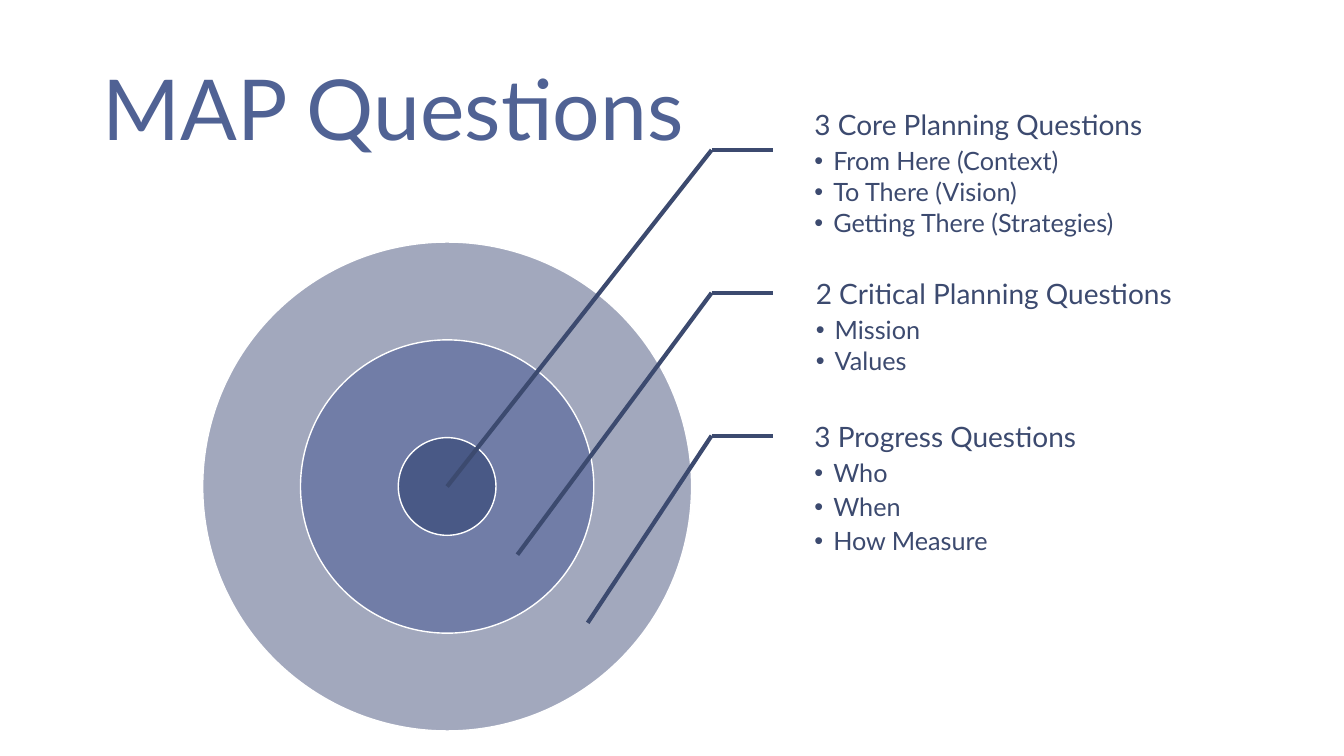
"""Build the MAP Questions slide: concentric rings with three labelled callouts."""
import pptx
import pptx.dml.color
import pptx.enum.shapes
import pptx.enum.text
import pptx.oxml
import pptx.oxml.ns
import pptx.util

Pt = pptx.util.Pt
INK = "3C4A6F"
RINGS = [("A2A8BD", 349.2), ("717DA7", 209.5), ("495986", 69.8)]
CENTER_X, CENTER_Y = 319.4, 347.5
ELBOW_X, LABEL_X = 508.3, 552.2
CALLOUT_Y, CALLOUT_STEP = 107.2, 102
TARGET_DX, TARGET_DY = 50.2, 48.7
CALLOUTS = [
    ("3 Core Planning Questions",
     ["From Here (Context)", "To There (Vision)", "Getting There (Strategies)"],
     (570.2, 77.8, 351.4, 101.5), 2.7),
    ("2 Critical Planning Questions", ["Mission", "Values"],
     (571.2, 198, 331.9, 101.5), 2.7),
    ("3 Progress Questions", ["Who", "When", "How Measure"],
     (570.2, 300.2, 243.4, 101.5), 5),
]


def rgb(value):
    return pptx.dml.color.RGBColor.from_string(value)


def place(sp, left, top, width, height):
    sp.left, sp.top, sp.width, sp.height = Pt(left), Pt(top), Pt(width), Pt(height)


def set_bullet(p, bullet):
    pPr = p._p.get_or_add_pPr()
    indent = Pt(13.5) if bullet else 0
    pPr.set("marL", str(indent))
    pPr.set("indent", str(-indent))
    if bullet:
        font = pptx.oxml.parse_xml(
            f'<a:buFont {pptx.oxml.ns.nsdecls("a")} typeface="Arial"/>')
        pPr.append(font)
        mark = f'buChar {pptx.oxml.ns.nsdecls("a")} char="{bullet}"'
    else:
        mark = f'buNone {pptx.oxml.ns.nsdecls("a")}'
    pPr.append(pptx.oxml.parse_xml(f"<a:{mark}/>"))


def write(p, text, size=18, color=INK, bullet=None, level=0, after=0):
    set_bullet(p, bullet)
    p.level = level
    p.alignment = pptx.enum.text.PP_ALIGN.LEFT
    p.line_spacing = 0.9
    p.space_before = Pt(0)
    p.space_after = Pt(after)
    r = p.add_run()
    r.text = text
    r.font.name = "Lato"
    r.font.size = Pt(size)
    r.font.bold = False
    r.font.color.rgb = rgb(color)


def add_title(s, text):
    sp = s.shapes.title
    place(sp, 66, 28.8, 828, 104.4)
    tf = sp.text_frame
    tf.auto_size = pptx.enum.text.MSO_AUTO_SIZE.NONE
    tf.vertical_anchor = pptx.enum.text.MSO_ANCHOR.MIDDLE
    write(tf.paragraphs[0], text, size=60, color="506294")


def add_ring(s, color, size):
    sp = s.shapes.add_shape(pptx.enum.shapes.MSO_SHAPE.OVAL, 0, 0, 0, 0)
    place(sp, CENTER_X - size / 2, CENTER_Y - size / 2, size, size)
    sp.shadow.inherit = False
    sp.fill.solid()
    sp.fill.fore_color.rgb = rgb(color)
    sp.line.color.rgb = rgb("FFFFFF")
    sp.line.width = Pt(1)


def add_line(s, x1, y1, x2, y2):
    cx = s.shapes.add_connector(
        pptx.enum.shapes.MSO_CONNECTOR.STRAIGHT, Pt(x1), Pt(y1), Pt(x2), Pt(y2))
    cx.line.color.rgb = rgb(INK)
    cx.line.width = Pt(3)
    cx._element.spPr.append(pptx.oxml.parse_xml(
        f'<a:effectLst {pptx.oxml.ns.nsdecls("a")}/>'))


def fill_list(sp, heading, items, box, after):
    place(sp, *box)
    tf = sp.text_frame
    tf.word_wrap = True
    tf.auto_size = pptx.enum.text.MSO_AUTO_SIZE.NONE
    tf.vertical_anchor = pptx.enum.text.MSO_ANCHOR.TOP
    tf.margin_left = Pt(11.5)
    tf.margin_top = tf.margin_right = tf.margin_bottom = Pt(2)
    write(tf.paragraphs[0], heading, size=20, after=5)
    for item in items:
        write(tf.add_paragraph(), item, bullet="•", level=1, after=after)


def main():
    prs = pptx.Presentation()
    prs.slide_width, prs.slide_height = Pt(960), Pt(540)
    s = prs.slides.add_slide(prs.slide_layouts.get_by_name("Comparison"))
    add_title(s, "MAP Questions")
    for color, size in RINGS:
        add_ring(s, color, size)
    bodies = list(s.placeholders)[1:]
    for i, (sp, callout) in enumerate(zip(bodies, CALLOUTS)):
        fill_list(sp, *callout)
        y = CALLOUT_Y + i * CALLOUT_STEP
        add_line(s, ELBOW_X, y, LABEL_X, y)
        add_line(s, ELBOW_X, y, CENTER_X + i * TARGET_DX, CENTER_Y + i * TARGET_DY)
    for sp in bodies[len(CALLOUTS):]:
        sp.element.getparent().remove(sp.element)
    prs.save("out.pptx")


if __name__ == "__main__":
    main()
